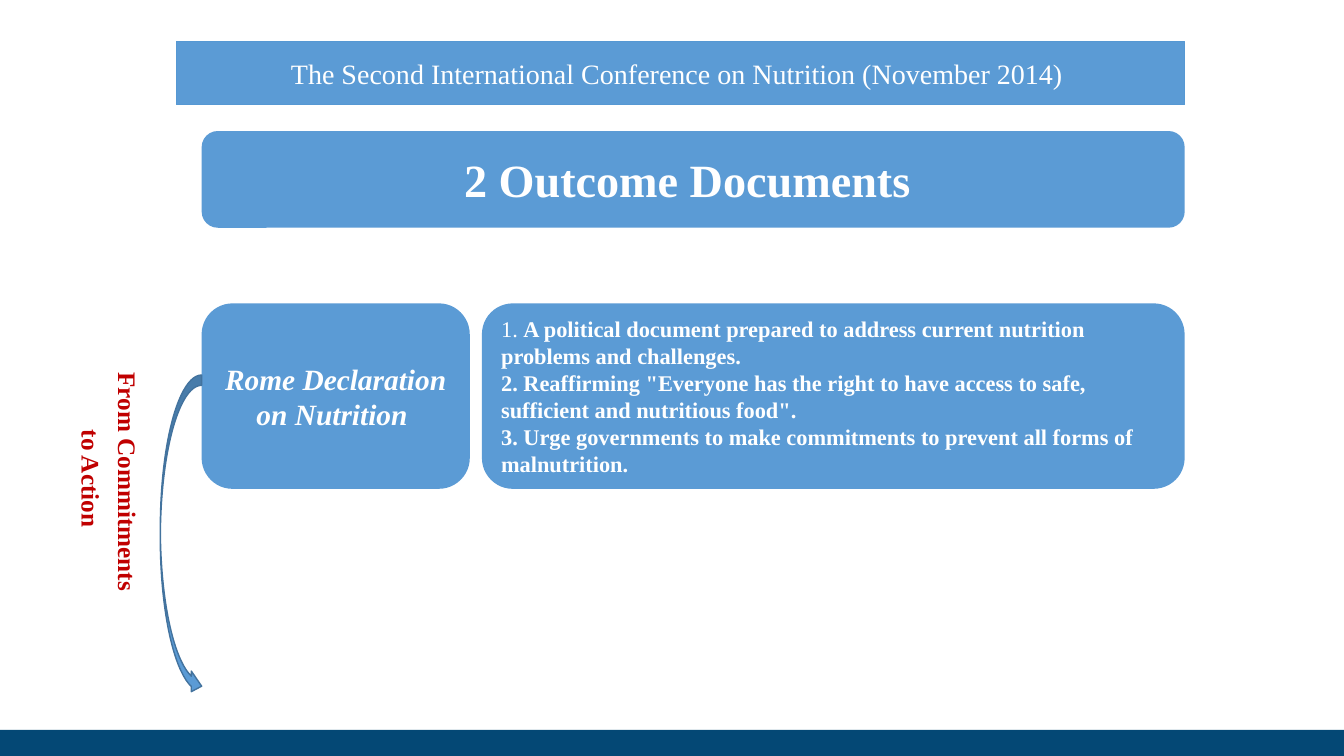
from pptx import Presentation
from pptx.dml.color import RGBColor
from pptx.enum.shapes import MSO_SHAPE as Shape
from pptx.enum.text import MSO_ANCHOR as Anchor, MSO_AUTO_SIZE as AutoSize, PP_ALIGN as Align
from pptx.oxml.xmlchemy import OxmlElement
from pptx.util import Pt

PX = 9144  # 100 px to the inch
FONT = "Times New Roman"
BLUE, NAVY, RED, WHITE = "5B9BD5", "044875", "C00000", "FFFFFF"

STATEMENTS = [
    ("1. ", "A political document prepared to address current nutrition problems and challenges."),
    ("", '2. Reaffirming "Everyone has the right to have access to safe, '
         'sufficient and nutritious food".'),
    ("", "3. Urge governments to make commitments to prevent all forms of malnutrition."),
]


def emu(*lengths):
    return [length * PX for length in lengths]


def color(hex_value):
    return RGBColor.from_string(hex_value)


def place(item, box):
    item.left, item.top, item.width, item.height = emu(*box)


def paint(item, fill, line=None):
    item.fill.solid()
    item.fill.fore_color.rgb = color(fill)
    if line:
        item.line.color.rgb = color(line)
        item.line.width = Pt(1)
    else:
        item.line.fill.background()


def style(paragraph, size, hex_value=WHITE, bold=False, italic=False, align=Align.CENTER):
    paragraph.alignment = align
    font = paragraph.font
    font.name, font.size, font.bold, font.italic = FONT, Pt(size), bold, italic
    font.color.rgb = color(hex_value)


def add_panel(slide, kind, box, fill=BLUE, line=None):
    panel = slide.shapes.add_shape(kind, *emu(*box))
    panel.shadow.inherit = False
    paint(panel, fill, line)
    return panel


def add_heading(slide, box, text, size, italic=False):
    frame = add_panel(slide, Shape.ROUNDED_RECTANGLE, box).text_frame
    frame.vertical_anchor = Anchor.MIDDLE
    frame.text = text
    style(frame.paragraphs[0], size, bold=True, italic=italic)


def set_banner(banner, box, text):
    place(banner, box)
    paint(banner, BLUE, "5698D3")
    frame = banner.text_frame
    frame.auto_size = AutoSize.NONE
    frame.vertical_anchor = Anchor.MIDDLE
    frame.text = text
    style(frame.paragraphs[0], 20)


def set_statements(body, box):
    place(body, box)
    frame = body.text_frame
    frame.auto_size = AutoSize.NONE
    frame.vertical_anchor = Anchor.MIDDLE
    for index, (number, statement) in enumerate(STATEMENTS):
        paragraph = frame.add_paragraph() if index else frame.paragraphs[0]
        properties = paragraph._p.get_or_add_pPr()
        properties.set("marL", "0")
        properties.set("indent", "0")
        properties.append(OxmlElement("a:buNone"))
        paragraph.space_before = Pt(0)
        style(paragraph, 16, bold=True, align=Align.LEFT)
        if number:
            paragraph.add_run().text = number
            paragraph.runs[0].font.bold = False
        paragraph.add_run().text = statement


def add_vertical_label(slide, box, text):
    frame = slide.shapes.add_textbox(*emu(*box)).text_frame
    frame.word_wrap = True
    frame._txBody.bodyPr.set("vert", "vert")
    frame.text = text
    paragraph = frame.paragraphs[0]
    paragraph.line_spacing = 1.2
    style(paragraph, 18, RED, bold=True)


def main():
    deck = Presentation()
    deck.slide_width, deck.slide_height = emu(1333, 750)
    slide = deck.slides.add_slide(deck.slide_layouts[1])
    banner, body = slide.placeholders

    # Footer bar and title banner
    add_panel(slide, Shape.RECTANGLE, (0, 724, 1333, 26), NAVY)
    set_banner(banner, (175, 41, 1000, 63),
               "The Second International Conference on Nutrition (November 2014) ")

    # Outcome documents
    add_heading(slide, (200, 130, 975, 96), "2 Outcome Documents ", 33)
    add_heading(slide, (200, 301, 266, 184), "Rome Declaration on Nutrition ", 21, italic=True)

    # Statements, brought in front of their panel
    add_panel(slide, Shape.ROUNDED_RECTANGLE, (478, 301, 697, 184))
    set_statements(body, (487, 301, 679, 184))
    slide.shapes._spTree.append(body._element)

    # From commitments to action
    add_panel(slide, Shape.CURVED_RIGHT_ARROW, (159, 372, 41, 319), line="43739E")
    add_vertical_label(slide, (63, 358, 90, 240), "From Commitments to Action ")

    deck.save("out.pptx")


if __name__ == "__main__":
    main()
